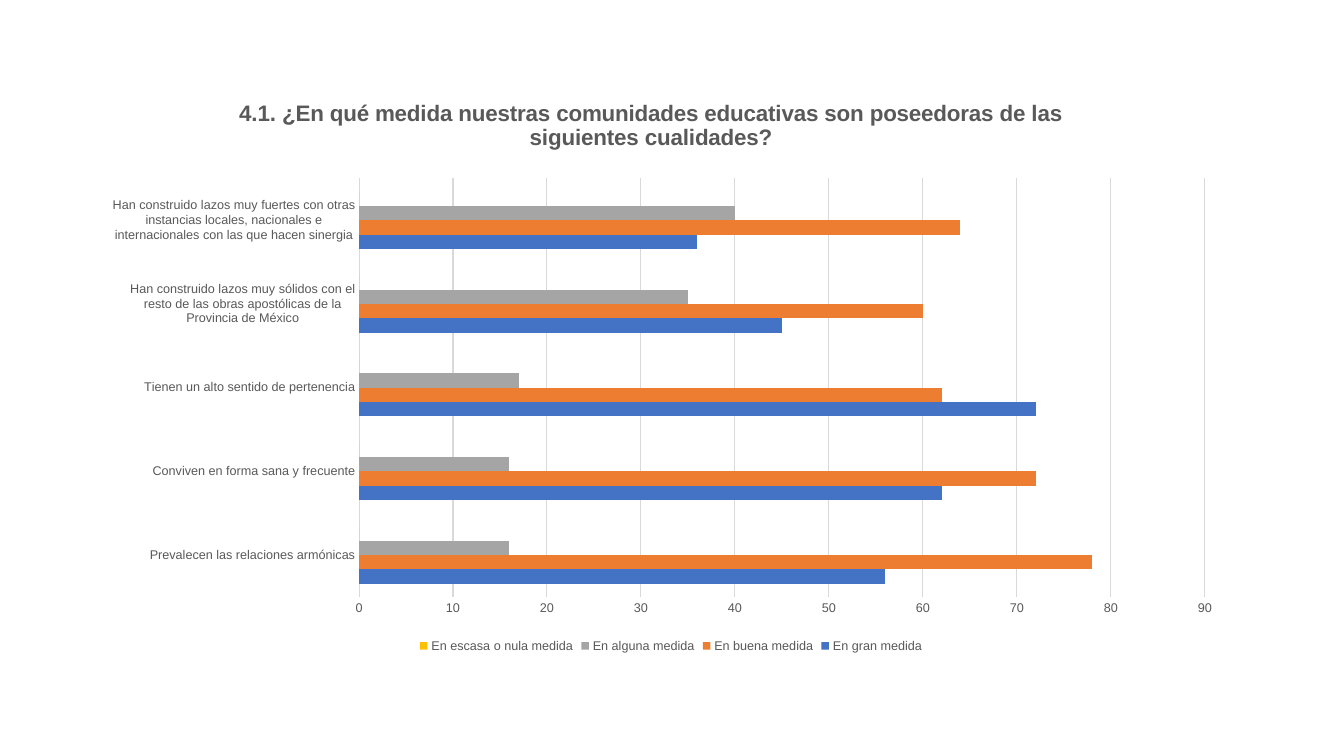
from lxml.etree import SubElement
from pptx import Presentation
from pptx.chart.data import CategoryChartData
from pptx.dml.color import RGBColor
from pptx.enum.chart import XL_CHART_TYPE, XL_LEGEND_POSITION, XL_TICK_MARK
from pptx.oxml.ns import qn
from pptx.util import Inches, Pt

TITLE = "4.1. ¿En qué medida nuestras comunidades educativas son poseedoras de las siguientes cualidades?"
CATEGORIES = [
    "Prevalecen las relaciones armónicas",
    "Conviven en forma sana y frecuente",
    "Tienen un alto sentido de pertenencia",
    "Han construido lazos muy sólidos con el resto de las obras apostólicas de la Provincia de México",
    "Han construido lazos muy fuertes con otras instancias locales, nacionales e internacionales con las que hacen sinergia",
]
SERIES = [
    ("En gran medida", (56, 62, 72, 45, 36), "4472C4"),
    ("En buena medida", (78, 72, 62, 60, 64), "ED7D31"),
    ("En alguna medida", (16, 16, 17, 35, 40), "A5A5A5"),
    ("En escasa o nula medida", (0, 0, 0, 0, 0), "FFC000"),
]
THEME = {"font": "Arial", "text": "595959", "line": "D9D9D9",
         "label": 9, "title": 16, "stroke": 0.75}
CHART_BOX = (1.07, 0.88, 11.17, 5.64)
PLOT_BOX = (3.56, 1.77, 8.39, 4.15)
TITLE_POS = (2.33, 0.94)


def set_attrs(obj, values):
    for name, value in values.items():
        setattr(obj, name, value)


def style_font(font, size, bold=False):
    set_attrs(font, {"name": THEME["font"], "size": Pt(size), "bold": bold})
    font.color.rgb = RGBColor.from_string(THEME["text"])


def style_line(line):
    line.color.rgb = RGBColor.from_string(THEME["line"])
    line.width = Pt(THEME["stroke"])


def place(parent, index, box, inner=False):
    for old in parent.findall(qn("c:layout")):
        parent.remove(old)
    layout = SubElement(parent, qn("c:layout"))
    parent.insert(index, layout)
    manual = SubElement(layout, qn("c:manualLayout"))
    left, top, width, height = CHART_BOX
    fractions = [(box[0] - left) / width, (box[1] - top) / height]
    fractions += [n / full for n, full in zip(box[2:], (width, height))]
    items = [("layoutTarget", "inner")] if inner else []
    items += [("xMode", "edge"), ("yMode", "edge")]
    items += [(k, f"{v:.3f}") for k, v in zip("xywh", fractions)]
    for tag, value in items:
        SubElement(manual, qn(f"c:{tag}")).set("val", value)


def build_chart(s):
    data = CategoryChartData()
    data.categories = CATEGORIES
    for name, values, _ in SERIES:
        data.add_series(name, values)
    chart = s.shapes.add_chart(XL_CHART_TYPE.BAR_CLUSTERED,
                               *map(Inches, CHART_BOX), data).chart
    style_font(chart.font, THEME["label"])

    chart.has_title = True
    title = chart.chart_title
    r = title.text_frame.paragraphs[0].add_run()
    r.text = TITLE
    style_font(r.font, THEME["title"], True)
    title.include_in_layout = False
    place(title._element, 1, TITLE_POS)

    plot = chart.plots[0]
    set_attrs(plot, {"gap_width": 182, "overlap": 0, "vary_by_categories": False})
    for series, (_, _, color) in zip(plot.series, SERIES):
        series.format.fill.solid()
        series.format.fill.fore_color.rgb = RGBColor.from_string(color)
    place(chart._chartSpace.chart.plotArea, 0, PLOT_BOX, True)

    for axis in (chart.category_axis, chart.value_axis):
        set_attrs(axis, {"major_tick_mark": XL_TICK_MARK.NONE,
                         "minor_tick_mark": XL_TICK_MARK.NONE})
        style_font(axis.tick_labels.font, THEME["label"])
    style_line(chart.category_axis.format.line)
    set_attrs(chart.value_axis, {"minimum_scale": 0, "maximum_scale": 90,
                                 "major_unit": 10, "has_major_gridlines": True})
    chart.value_axis.format.line.fill.background()
    style_line(chart.value_axis.major_gridlines.format.line)

    chart.has_legend = True
    set_attrs(chart.legend, {"position": XL_LEGEND_POSITION.BOTTOM,
                             "include_in_layout": False})
    style_font(chart.legend.font, THEME["label"])


def main():
    prs = Presentation()
    set_attrs(prs, {"slide_width": Inches(13.33), "slide_height": Inches(7.5)})
    s = prs.slides.add_slide(prs.slide_layouts[6])
    build_chart(s)
    prs.save("out.pptx")


if __name__ == "__main__":
    main()
